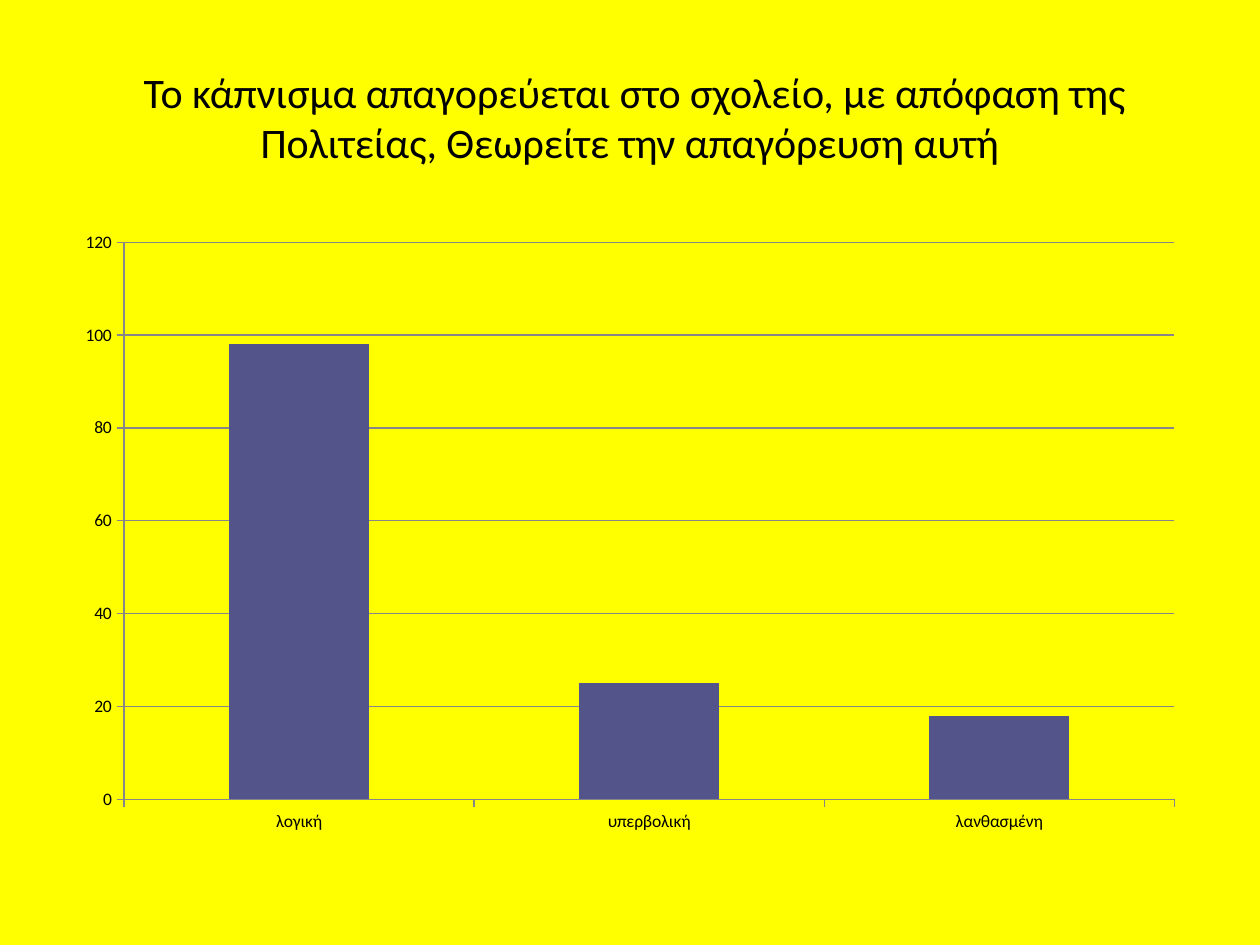
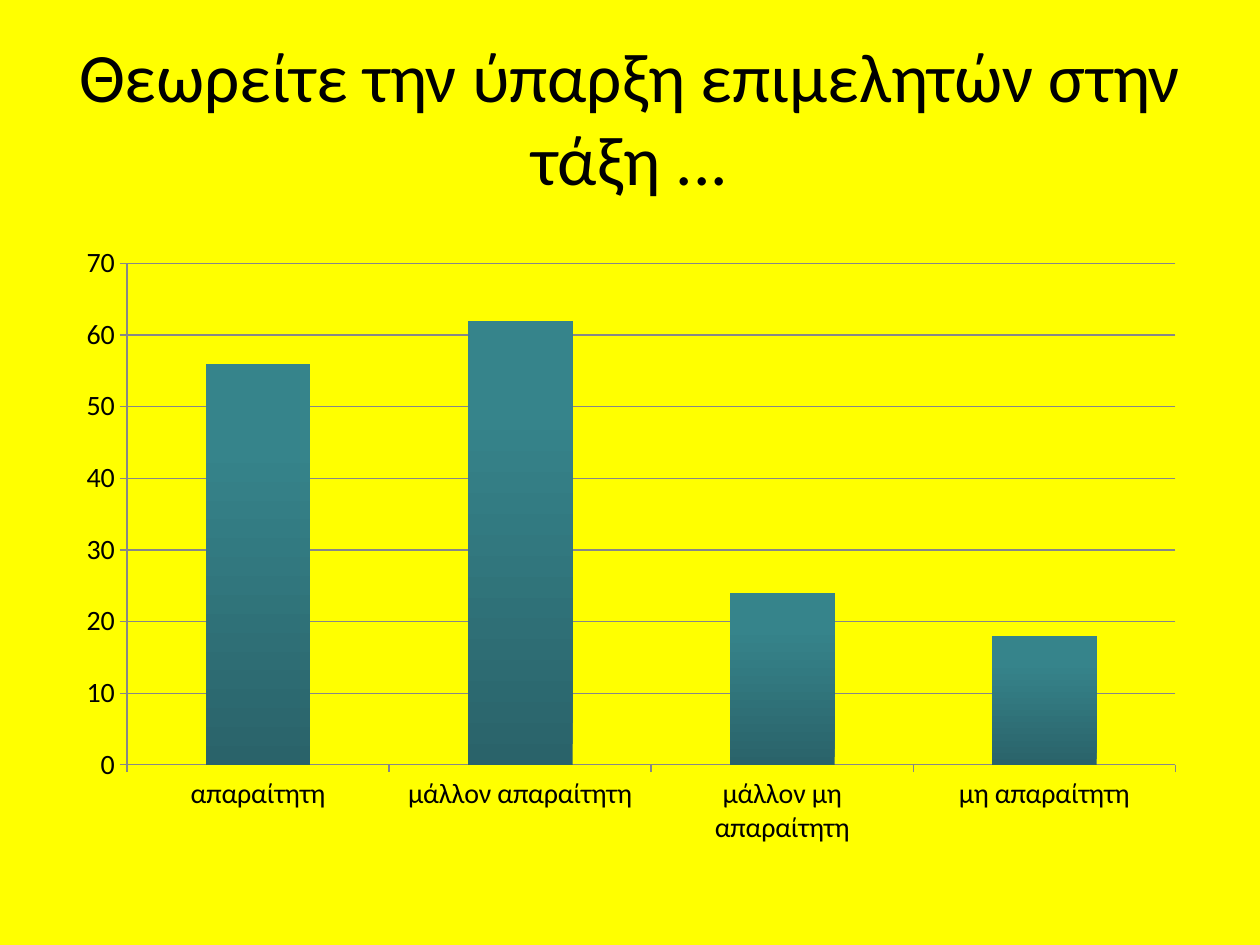
from pptx import Presentation
from pptx.chart.data import CategoryChartData
from pptx.dml.color import RGBColor
from pptx.enum.chart import XL_CHART_TYPE, XL_TICK_MARK
from pptx.enum.text import MSO_ANCHOR, PP_ALIGN
from pptx.util import Emu, Pt

FONT = "Calibri"
YELLOW, BLACK, GREY = "FFFF00", "000000", "878787"
INDIGO, TEAL, DARK_TEAL = "53548A", "36848B", "2A636A"


def px(length):
    """Turn pixels, 126 to the inch, into EMU."""
    return Emu(round(length * 914400 / 126))


def color(value):
    """Turn a hex string into a colour."""
    return RGBColor.from_string(value)


def style_font(font, size):
    """Apply the shared typeface and text colour."""
    font.name = FONT
    font.size = Pt(size)
    font.color.rgb = color(BLACK)


def add_page(deck):
    """Add a blank page with the yellow background."""
    page = deck.slides.add_slide(deck.slide_layouts[6])
    page.background.fill.solid()
    page.background.fill.fore_color.rgb = color(YELLOW)
    return page


def add_title(page, text, size):
    """Add the centred question at the top of a page."""
    box = page.shapes.add_textbox(px(63), px(38), px(1134), px(157))
    frame = box.text_frame
    frame.word_wrap = True
    frame.vertical_anchor = MSO_ANCHOR.MIDDLE
    frame.text = text
    para = frame.paragraphs[0]
    para.alignment = PP_ALIGN.CENTER
    style_font(para.runs[0].font, size)


def style_axis(axis):
    """Give an axis a thin grey line and outside ticks."""
    axis.major_tick_mark = XL_TICK_MARK.OUTSIDE
    axis.minor_tick_mark = XL_TICK_MARK.NONE
    style_line(axis.format.line)


def style_line(line):
    """Give a chart line the shared grey hairline."""
    line.color.rgb = color(GREY)
    line.width = Pt(0.75)


def fill_bars(fill, top, bottom):
    """Fill bars plainly, or with a gradient when the ends differ."""
    if top == bottom:
        fill.solid()
        fill.fore_color.rgb = color(top)
        return
    fill.gradient()
    fill.gradient_angle = 90
    for stop, position, value in zip(fill.gradient_stops, (0, 0.8), (bottom, top)):
        stop.position = position
        stop.color.rgb = color(value)


def add_answers(page, left, top, answers, size, maximum, step, bar_colors):
    """Add a column chart of the answers to the question."""
    data = CategoryChartData()
    data.categories = list(answers)
    data.add_series("Series 1", list(answers.values()))
    chart = page.shapes.add_chart(
        XL_CHART_TYPE.COLUMN_CLUSTERED, px(left), px(top), px(1134), px(624), data
    ).chart
    chart.has_legend = False
    chart.has_title = False
    style_font(chart.font, size)
    plot = chart.plots[0]
    plot.vary_by_categories = False
    plot.gap_width = 150
    fill_bars(plot.series[0].format.fill, *bar_colors)
    style_axis(chart.category_axis)
    scale = chart.value_axis
    style_axis(scale)
    scale.minimum_scale, scale.maximum_scale, scale.major_unit = 0, maximum, step
    scale.has_major_gridlines = True
    style_line(scale.major_gridlines.format.line)


def main():
    """Build the two survey pages."""
    deck = Presentation()
    deck.slide_width, deck.slide_height = px(1260), px(945)

    page = add_page(deck)
    add_title(page, " Το κάπνισμα απαγορεύεται στο σχολείο, με απόφαση της "
              "Πολιτείας, Θεωρείτε την απαγόρευση αυτή", 24)
    smoking_ban = {"λογική": 98, "υπερβολική": 25, "λανθασμένη": 18}
    add_answers(page, 63, 220, smoking_ban, 10, 120, 20, (INDIGO, INDIGO))

    page = add_page(deck)
    add_title(page, "Θεωρείτε την ύπαρξη επιμελητών στην τάξη ...", 39.6)
    class_monitors = {"απαραίτητη": 56, "μάλλον απαραίτητη": 62,
                      "μάλλον μη απαραίτητη": 24, "μη απαραίτητη": 18}
    add_answers(page, 64, 234, class_monitors, 16, 70, 10, (TEAL, DARK_TEAL))

    deck.save("out.pptx")


if __name__ == "__main__":
    main()
